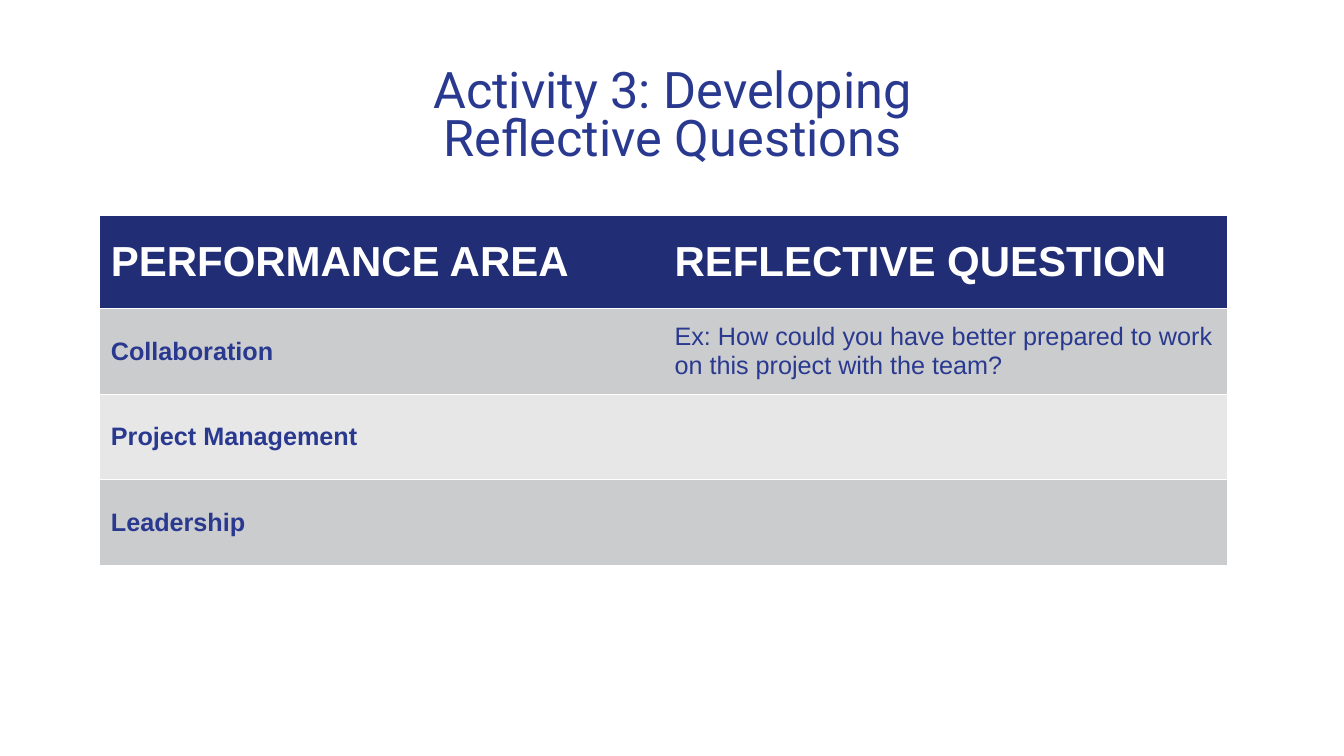
"""Build the slide with a table of performance areas and reflective questions."""
from lxml.etree import SubElement
from pptx import Presentation
from pptx.dml.color import RGBColor
from pptx.enum.text import MSO_ANCHOR, PP_ALIGN
from pptx.oxml.ns import qn
from pptx.util import Pt

PX = 9144
NAVY, BLUE, WHITE = "212D74", "2A3990", "FFFFFF"
DARK_GREY, LIGHT_GREY = "CBCCCD", "E7E7E8"


def rgb(value):
    return RGBColor.from_string(value)


def write(tf, text, size=18, font="Arial", color=BLUE, bold=False,
          align=PP_ALIGN.LEFT, spacing=1.0):
    p = tf.paragraphs[0]
    p.alignment = align
    p.line_spacing = spacing
    r = p.add_run()
    r.text = text
    r.font.size = Pt(size)
    r.font.name = font
    r.font.bold = bold
    r.font.color.rgb = rgb(color)


prs = Presentation()
prs.slide_width = 1333 * PX
prs.slide_height = 750 * PX
s = prs.slides.add_slide(prs.slide_layouts[6])

title = s.shapes.add_textbox(305 * PX, 53 * PX, 724 * PX, 117 * PX)
tf = title.text_frame
tf.word_wrap = True
tf.vertical_anchor = MSO_ANCHOR.BOTTOM
write(tf, "Activity 3: Developing Reflective Questions", size=36, font="Roboto",
      align=PP_ALIGN.CENTER, spacing=0.8)

rows = [
    ("PERFORMANCE AREA", "REFLECTIVE QUESTION"),
    ("Collaboration", "Ex: How could you have better prepared to work on this project with the team?"),
    ("Project Management", ""),
    ("Leadership", ""),
]
heights = [92, 85, 85, 85]
fills = [NAVY, DARK_GREY, LIGHT_GREY, DARK_GREY]

table = s.shapes.add_table(len(rows), 2, 99 * PX, 214 * PX, 1118 * PX, sum(heights) * PX).table
table.horz_banding = False
for column in table.columns:
    column.width = 559 * PX

for i, (texts, height, fill) in enumerate(zip(rows, heights, fills)):
    table.rows[i].height = height * PX
    for j, text in enumerate(texts):
        cell = table.cell(i, j)
        cell.vertical_anchor = MSO_ANCHOR.MIDDLE
        cell.margin_left = cell.margin_right = 11 * PX
        cell.margin_top = cell.margin_bottom = 11 * PX
        tcPr = cell._tc.get_or_add_tcPr()
        for side in ("lnL", "lnR"):
            SubElement(SubElement(tcPr, qn(f"a:{side}"), w="0"), qn("a:noFill"))
        for side in ("lnT", "lnB"):
            ln = SubElement(tcPr, qn(f"a:{side}"), w=str(Pt(0.75)))
            SubElement(SubElement(ln, qn("a:solidFill")), qn("a:srgbClr"), val=WHITE)
        cell.fill.solid()
        cell.fill.fore_color.rgb = rgb(fill)
        if text:
            header = i == 0
            write(cell.text_frame, text, size=30 if header else 18,
                  color=WHITE if header else BLUE, bold=header or j == 0)

prs.save("out.pptx")
